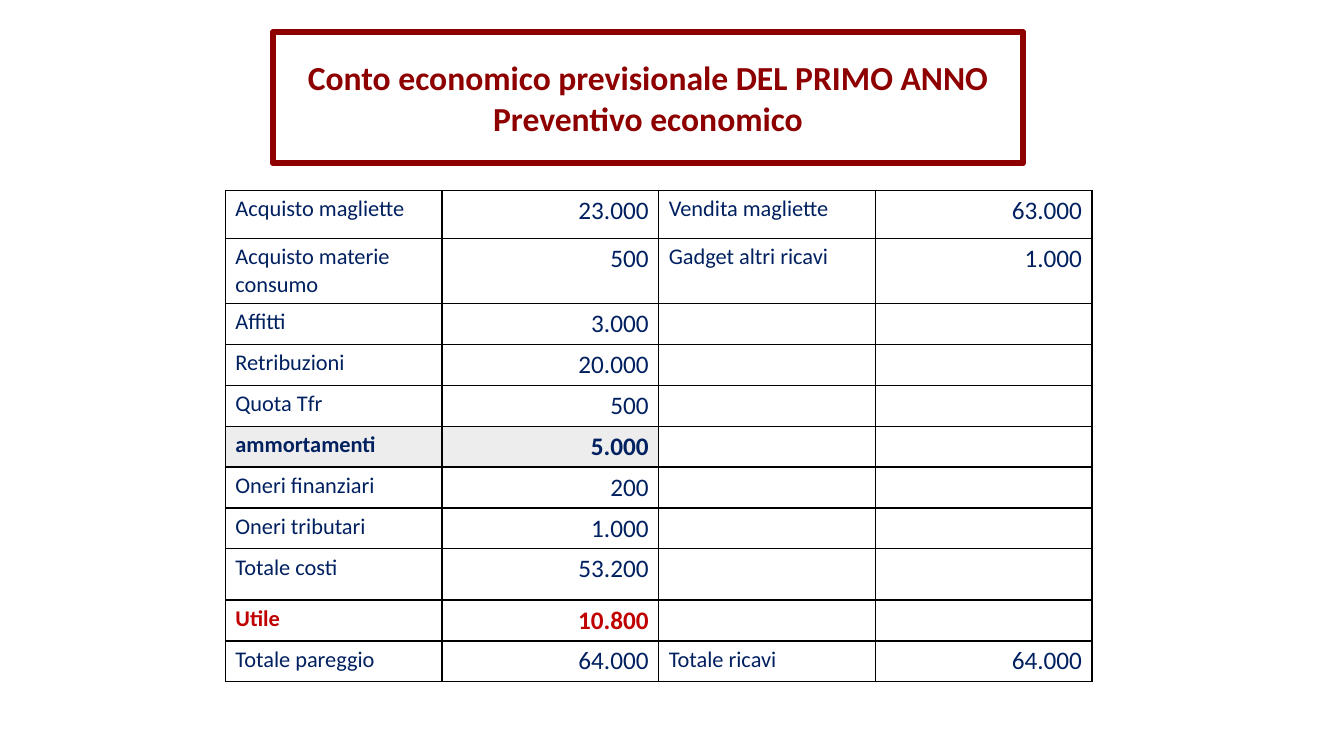
from lxml import etree
from pptx import Presentation
from pptx.dml.color import RGBColor
from pptx.enum.text import MSO_ANCHOR, MSO_AUTO_SIZE, PP_ALIGN
from pptx.oxml.ns import qn
from pptx.util import Cm, Pt

CENTER, LEFT, RIGHT = PP_ALIGN.CENTER, PP_ALIGN.LEFT, PP_ALIGN.RIGHT
MIDDLE = MSO_ANCHOR.MIDDLE
NO_AUTOFIT = MSO_AUTO_SIZE.NONE
TITLE_ONLY = 5

FONT = "Calibri"
COLORS = {
    "heading": "8E0000",
    "text": "002060",
    "profit": "C00000",
    "white": "FFFFFF",
    "shade": "EDEDED",
    "border": "000000",
}

HEADING = "Conto economico previsionale DEL PRIMO ANNO\nPreventivo economico"

# Cost label, cost amount, revenue label, revenue amount
ENTRIES = [
    ("Acquisto magliette", "23.000", "Vendita magliette", "63.000"),
    ("Acquisto materie consumo", "500", "Gadget altri ricavi", "1.000"),
    ("Affitti", "3.000", "", ""),
    ("Retribuzioni", "20.000", "", ""),
    ("Quota Tfr", "500", "", ""),
    ("ammortamenti", "5.000", "", ""),
    ("Oneri finanziari", "200", "", ""),
    ("Oneri tributari", "1.000", "", ""),
    ("Totale costi", "53.200", "", ""),
    ("Utile", "10.800", "", ""),
    ("Totale pareggio", "64.000", "Totale ricavi", "64.000"),
]
ROW_HEIGHT = 1.03
TALL_ROWS = {"Acquisto magliette": 1.21, "Acquisto materie consumo": 1.64,
             "Totale costi": 1.29}
BOLD_ROWS = {"ammortamenti", "Utile"}


def rgb(name):
    return RGBColor.from_string(COLORS[name])


def format_paragraph(paragraph, size, color, bold, align):
    paragraph.alignment = align
    for run in paragraph.runs:
        run.font.name = FONT
        run.font.size = Pt(size)
        run.font.bold = bold
        run.font.color.rgb = rgb(color)


def add_borders(cell):
    properties = cell._tc.get_or_add_tcPr()
    for side in ("a:lnL", "a:lnR", "a:lnT", "a:lnB"):
        border = etree.SubElement(properties, qn(side), w=str(Pt(1)))
        fill = etree.SubElement(border, qn("a:solidFill"))
        etree.SubElement(fill, qn("a:srgbClr"), val=COLORS["border"])


def place_heading(slide, left, top, width, height):
    heading = slide.shapes.title
    heading.left, heading.top = Cm(left), Cm(top)
    heading.width, heading.height = Cm(width), Cm(height)
    heading.fill.solid()
    heading.fill.fore_color.rgb = rgb("white")
    heading.line.color.rgb = rgb("heading")
    heading.line.width = Pt(4.5)

    frame = heading.text_frame
    frame.text = HEADING
    frame.word_wrap = True
    frame.auto_size = NO_AUTOFIT
    frame.vertical_anchor = MIDDLE
    for paragraph in frame.paragraphs:
        format_paragraph(paragraph, 24, "heading", True, CENTER)


def fill_entry(cell, text, label, is_amount, is_cost):
    add_borders(cell)
    cell.fill.solid()
    shaded = label == "ammortamenti" and is_cost
    cell.fill.fore_color.rgb = rgb("shade" if shaded else "white")
    if text:
        cell.text_frame.text = text
        format_paragraph(
            cell.text_frame.paragraphs[0],
            size=18 if is_amount else 16,
            color="profit" if label == "Utile" else "text",
            bold=label in BOLD_ROWS,
            align=RIGHT if is_amount else LEFT,
        )


def place_statement(slide, left, top, width):
    heights = [TALL_ROWS.get(entry[0], ROW_HEIGHT) for entry in ENTRIES]
    columns = len(ENTRIES[0])
    statement = slide.shapes.add_table(
        len(ENTRIES), columns, Cm(left), Cm(top), Cm(width), Cm(sum(heights))
    ).table
    statement.first_row = False
    statement.horz_banding = False
    for column in statement.columns:
        column.width = Cm(width / columns)
    for row, height, entry in zip(statement.rows, heights, ENTRIES):
        row.height = Cm(height)
        for index, (cell, text) in enumerate(zip(row.cells, entry)):
            fill_entry(cell, text, entry[0],
                       is_amount=index % 2 == 1, is_cost=index < 2)


def main():
    deck = Presentation()
    deck.slide_width, deck.slide_height = Cm(33.87), Cm(19.05)
    slide = deck.slides.add_slide(deck.slide_layouts[TITLE_ONLY])
    slide.background.fill.solid()
    slide.background.fill.fore_color.rgb = rgb("white")
    place_statement(slide, left=5.68, top=4.8, width=21.84)
    place_heading(slide, left=6.88, top=0.81, width=18.9, height=3.3)
    deck.save("out.pptx")


if __name__ == "__main__":
    main()
